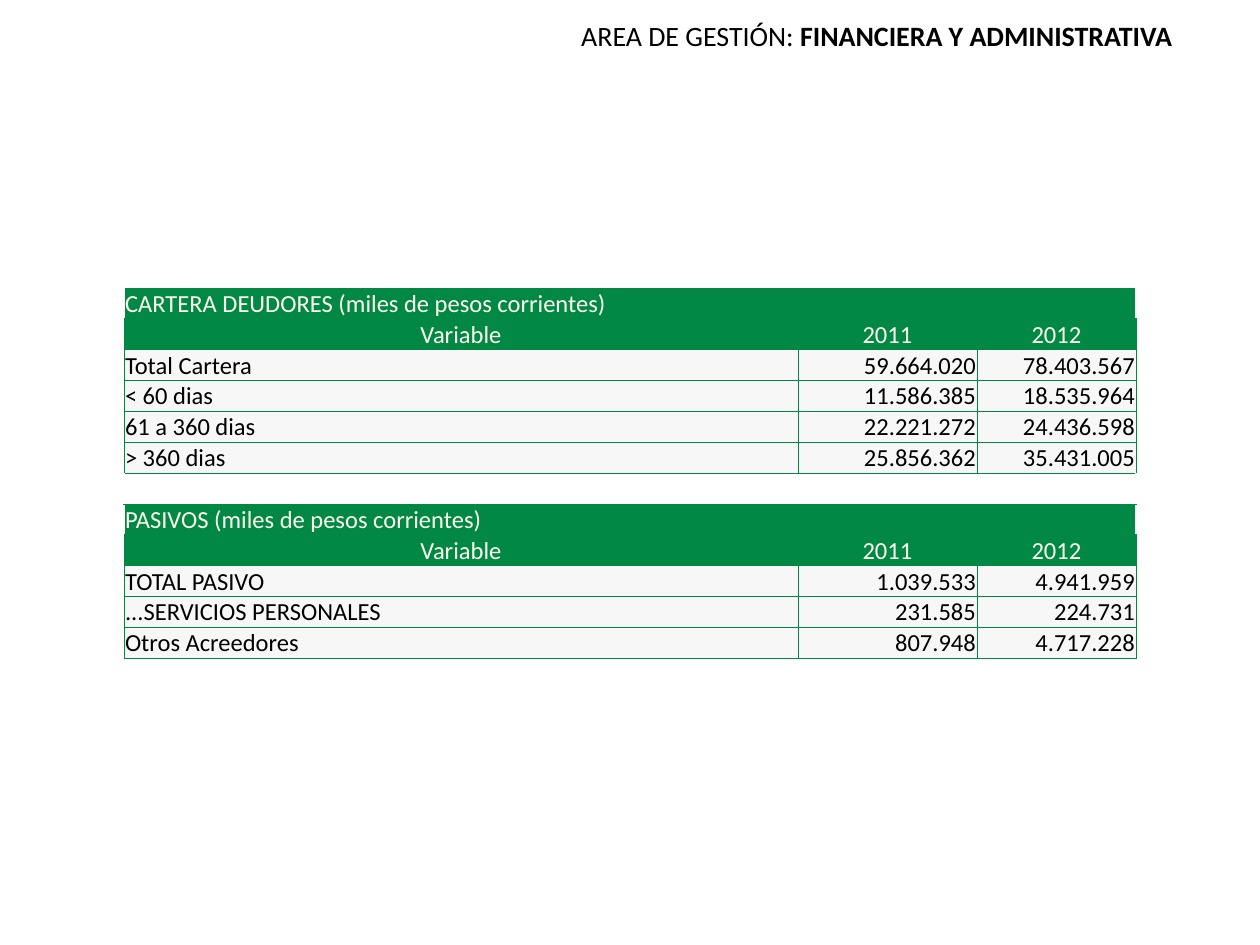
import pptx
import pptx.dml.color
import pptx.enum.text
import pptx.oxml.ns
import pptx.util
from lxml import etree

RGBColor = pptx.dml.color.RGBColor
ALIGN = pptx.enum.text.PP_ALIGN
ANCHOR = pptx.enum.text.MSO_ANCHOR

# Content
TITLE = ("AREA DE GESTIÓN: ", "FINANCIERA Y ADMINISTRATIVA")
HEADINGS = ("Variable", "2011", "2012")
SECTIONS = [
    ("CARTERA DEUDORES (miles de pesos corrientes)", [
        ("Total Cartera", "59.664.020", "78.403.567"),
        ("< 60 dias", "11.586.385", "18.535.964"),
        ("61 a 360 dias", "22.221.272", "24.436.598"),
        ("> 360 dias", "25.856.362", "35.431.005"),
    ]),
    ("PASIVOS (miles de pesos corrientes)", [
        ("TOTAL PASIVO", "1.039.533", "4.941.959"),
        ("...SERVICIOS PERSONALES", "231.585", "224.731"),
        ("Otros Acreedores", "807.948", "4.717.228"),
    ]),
]

# Look
FONT = "Calibri"
BLACK = RGBColor(0x00, 0x00, 0x00)
GREEN = RGBColor(0x00, 0x88, 0x44)
CREAM = RGBColor(0xFF, 0xFF, 0xEE)
GREY = RGBColor(0xF7, 0xF7, 0xF7)
TITLE_BOX = (64, 1, 1121, 68)
TABLE_LEFT, TABLE_TOP = 124, 288
COLUMN_WIDTHS = (674, 179, 159)
ROW_HEIGHT = 29
TEXT_SIZE = pptx.util.Pt(14)


def px(count):
    return round(count * 914400 / 126)


def set_font(font, size, color, bold=False):
    font.name, font.size, font.bold = FONT, size, bold
    font.color.rgb = color


def add_borders(cell, sides):
    properties = cell._tc.get_or_add_tcPr()
    for side in sides:
        line = etree.SubElement(properties, pptx.oxml.ns.qn("a:ln" + side),
                                w=str(pptx.util.Pt(0.5)))
        fill = etree.SubElement(line, pptx.oxml.ns.qn("a:solidFill"))
        etree.SubElement(fill, pptx.oxml.ns.qn("a:srgbClr"), val=str(GREEN))


def fill_cell(cell, text, kind, column):
    add_borders(cell, "LRTB" if kind in ("heading", "data") else "TB")
    cell.vertical_anchor = ANCHOR.BOTTOM
    cell.margin_left = cell.margin_right = cell.margin_top = px(1)
    cell.margin_bottom = 0
    if kind == "gap":
        cell.fill.background()
    else:
        cell.fill.solid()
        cell.fill.fore_color.rgb = GREY if kind == "data" else GREEN
    para = cell.text_frame.paragraphs[0]
    para.text = text
    if kind == "heading":
        para.alignment = ALIGN.CENTER
    elif kind == "data" and column > 0:
        para.alignment = ALIGN.RIGHT
    for span in para.runs:
        set_font(span.font, TEXT_SIZE, BLACK if kind == "data" else CREAM)
    if not text:  # an empty cell takes its height from the end mark
        etree.SubElement(para._p, pptx.oxml.ns.qn("a:endParaRPr"),
                         sz=str(int(TEXT_SIZE.pt * 100)))


deck = pptx.Presentation()
deck.slide_width, deck.slide_height = px(1260), px(945)
page = deck.slides.add_slide(deck.slide_layouts[5])

# Title
title = page.shapes.title
title.left, title.top, title.width, title.height = map(px, TITLE_BOX)
frame = title.text_frame
frame.word_wrap = True
frame.auto_size = pptx.enum.text.MSO_AUTO_SIZE.NONE
frame.vertical_anchor = ANCHOR.MIDDLE
para = frame.paragraphs[0]
para.alignment = ALIGN.RIGHT
for part, bold in zip(TITLE, (False, True)):
    span = para.add_run()
    span.text = part
    set_font(span.font, pptx.util.Pt(16), BLACK, bold)

# Rows: banner, headings and data per section, with a gap between sections
rows = []
for banner, records in SECTIONS:
    if rows:
        rows.append(("gap", ("", "", "")))
    rows += [("banner", (banner, "", "")), ("heading", HEADINGS)]
    rows += [("data", record) for record in records]

# Table
table = page.shapes.add_table(
    len(rows), len(COLUMN_WIDTHS), px(TABLE_LEFT), px(TABLE_TOP),
    px(sum(COLUMN_WIDTHS)), px(ROW_HEIGHT * len(rows))).table
table.first_row = table.horz_banding = False
for column, width in zip(table.columns, COLUMN_WIDTHS):
    column.width = px(width)
for index, (kind, texts) in enumerate(rows):
    table.rows[index].height = px(ROW_HEIGHT)
    for column, text in enumerate(texts):
        fill_cell(table.cell(index, column), text, kind, column)
    if kind in ("banner", "gap"):
        table.cell(index, 0).merge(table.cell(index, len(texts) - 1))

deck.save("out.pptx")
